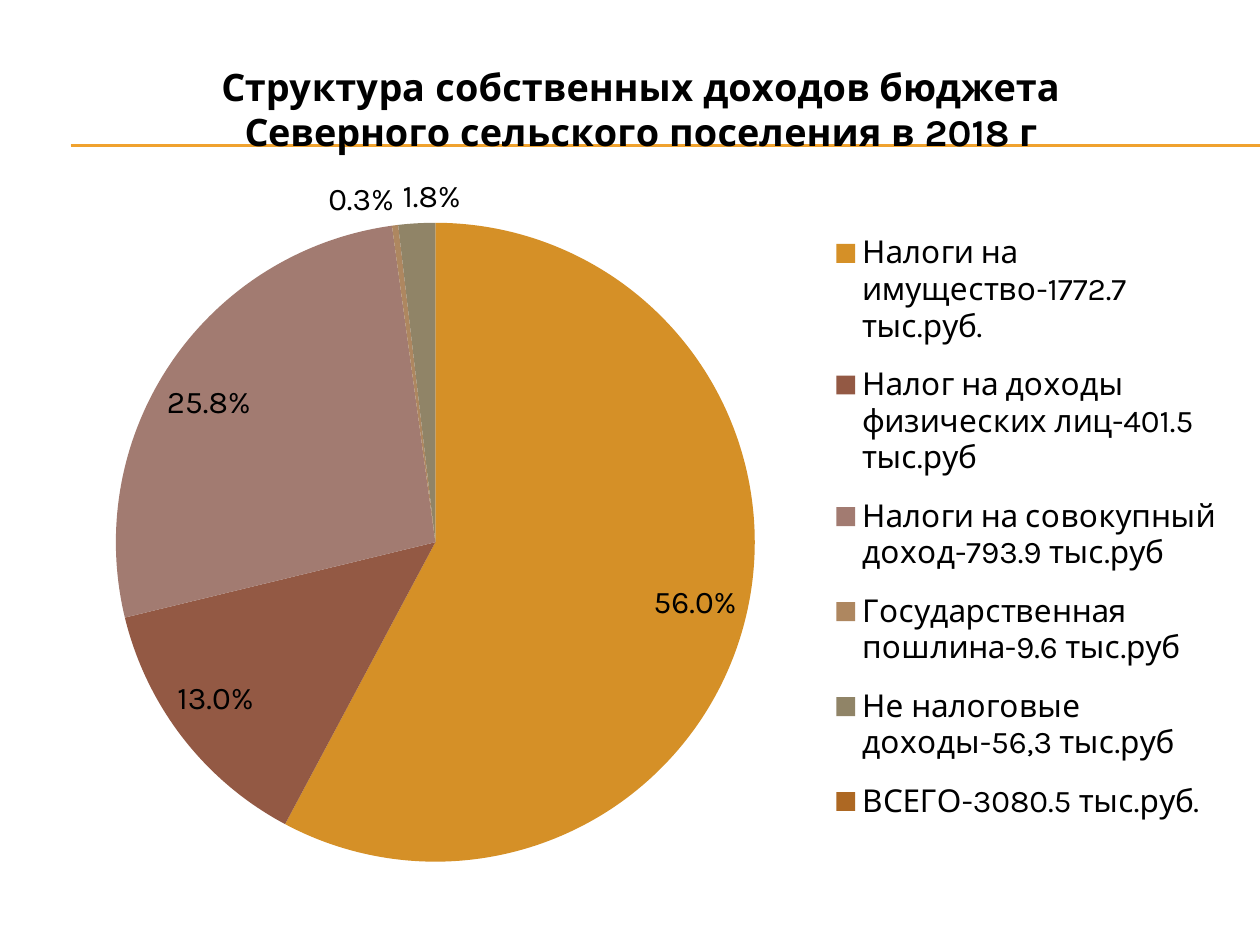
from lxml import etree
from pptx import Presentation, util as u
from pptx.chart.data import CategoryChartData
from pptx.dml.color import RGBColor
from pptx.enum import chart as ch, shapes
from pptx.oxml.ns import qn

# Content: legend text, share of revenue, colour name
TITLE = ["Структура собственных доходов бюджета",
         "Северного сельского поселения в 2018 г"]
REVENUES = [
    ("Налоги на имущество-1772.7 тыс.руб.", 0.56, "amber"),
    ("Налог на доходы физических лиц-401.5 тыс.руб", 0.13, "brick"),
    ("Налоги на совокупный доход-793.9 тыс.руб", 0.258, "rose"),
    ("Государственная пошлина-9.6 тыс.руб", 0.003, "tan"),
    ("Не налоговые доходы-56,3 тыс.руб", 0.018, "olive"),
    ("ВСЕГО-3080.5 тыс.руб.", None, "rust"),
]
COLOURS = {"amber": "D59027", "brick": "935944", "rose": "A27B71",
           "tan": "AE8760", "olive": "908467", "rust": "AD6823",
           "rule": "F0A22E", "text": "000000"}
FONT = "Karla"

# Places as shares of the chart: left, top, width, height
PLOT = (0.062, 0.221, 0.534, 0.758)
LEGEND = (0.655, 0.21, 0.335, 0.745)
HEADING = (0.147, 0.028)


def colour(name):
    return RGBColor.from_string(COLOURS[name])


def set_font(font, size, bold=False):
    font.name, font.size, font.bold = FONT, u.Pt(size), bold
    font.color.rgb = colour("text")


def place(part, shares, inner=False):
    """Give a chart part a manual layout."""
    layout = part.find(qn("c:layout"))
    if layout is None:
        layout = etree.Element(qn("c:layout"))
        before = [child for child in part
                  if child.tag in (qn("c:tx"), qn("c:legendPos"))]
        part.insert(len(before), layout)
    for child in list(layout):
        layout.remove(child)
    manual = etree.SubElement(layout, qn("c:manualLayout"))
    settings = [("layoutTarget", "inner")] if inner else []
    settings += [("xMode", "edge"), ("yMode", "edge")]
    settings += zip("xywh", map(str, shares))
    for tag, value in settings:
        etree.SubElement(manual, qn("c:" + tag)).set("val", value)


def add_rule(slide, top):
    rule = slide.shapes.add_connector(
        shapes.MSO_CONNECTOR.STRAIGHT,
        u.Inches(0.56), u.Inches(top), u.Inches(10), u.Inches(top))
    rule.line.color.rgb = colour("rule")
    rule.line.width = u.Pt(0.75)
    etree.SubElement(rule._element.spPr, qn("a:effectLst"))


def add_pie(slide):
    data = CategoryChartData(number_format="0.0%")
    data.categories = [name for name, _, _ in REVENUES]
    data.add_series("Series 1", [share for _, share, _ in REVENUES])
    chart = slide.shapes.add_chart(
        ch.XL_CHART_TYPE.PIE, u.Inches(0.33), u.Inches(0.29),
        u.Inches(9.5), u.Inches(6.69), data).chart
    set_font(chart.font, 18)

    # Heading
    frame = chart.chart_title.text_frame
    for number, line in enumerate(TITLE):
        para = frame.paragraphs[0] if number == 0 else frame.add_paragraph()
        para.text = line
        set_font(para.font, 21.6, bold=True)
    chart.chart_title.include_in_layout = False

    # Legend
    chart.has_legend = True
    chart.legend.position = ch.XL_LEGEND_POSITION.RIGHT
    chart.legend.include_in_layout = False
    set_font(chart.legend.font, 18)

    # Slices, with labels fitted so that none overlap
    plot = chart.plots[0]
    plot.vary_by_categories = True
    series = plot.series[0]
    labels = series.data_labels
    labels.show_value = True
    labels.show_percentage = False
    labels.number_format = "0.0%"
    labels.number_format_is_linked = False
    labels.position = ch.XL_LABEL_POSITION.BEST_FIT
    set_font(labels.font, 18)
    for number, (_, _, name) in enumerate(REVENUES):
        fill = series.points[number].format.fill
        fill.solid()
        fill.fore_color.rgb = colour(name)

    place(chart.chart_title._element, HEADING)
    place(chart.legend._element, LEGEND)
    place(chart._chartSpace.chart.plotArea, PLOT, inner=True)


def main():
    deck = Presentation()
    deck.slide_width, deck.slide_height = u.Inches(10), u.Inches(7.5)
    slide = deck.slides.add_slide(deck.slide_layouts[6])
    for top in (1.15, 1.16):
        add_rule(slide, top)
    add_pie(slide)
    deck.save("out.pptx")


if __name__ == "__main__":
    main()
